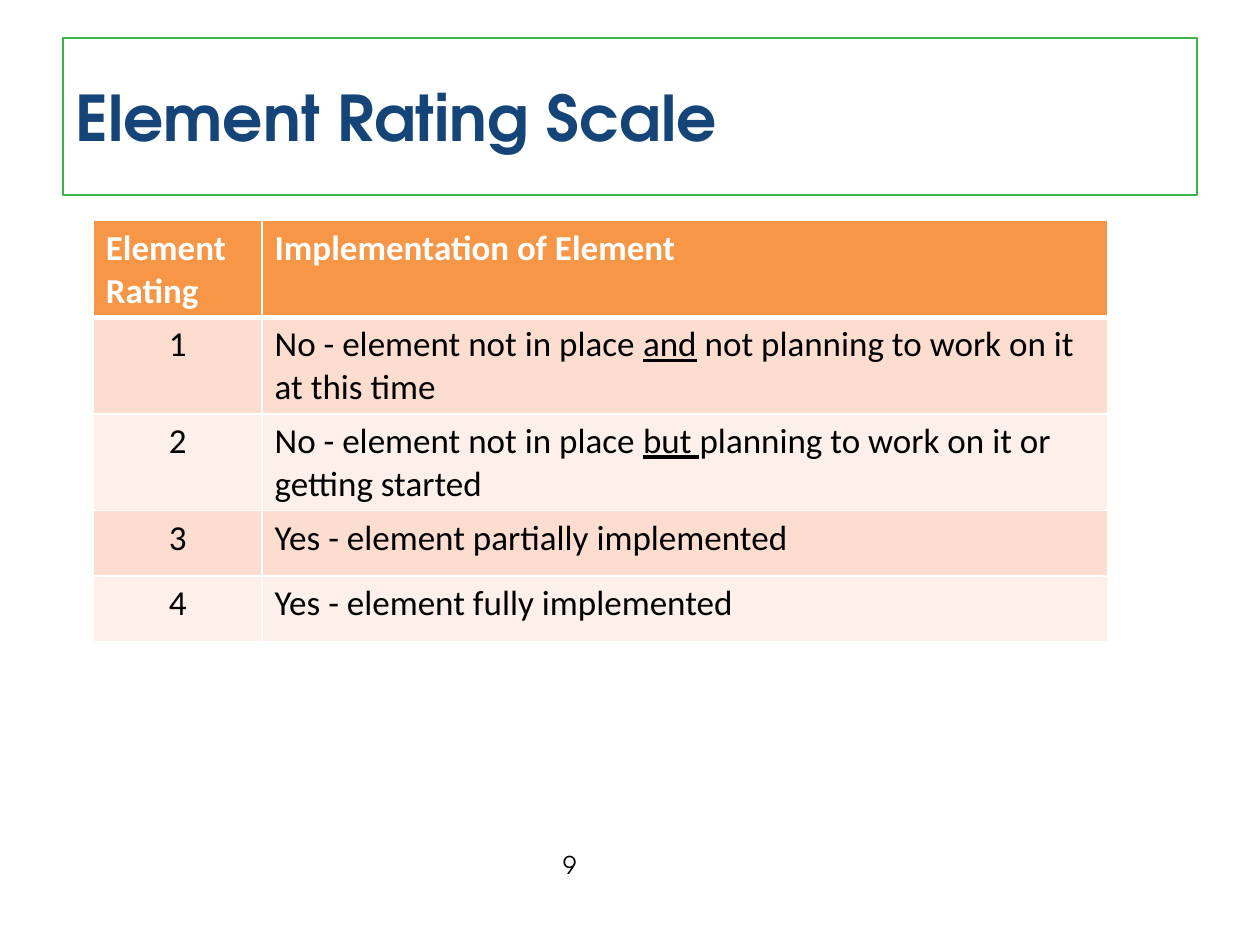
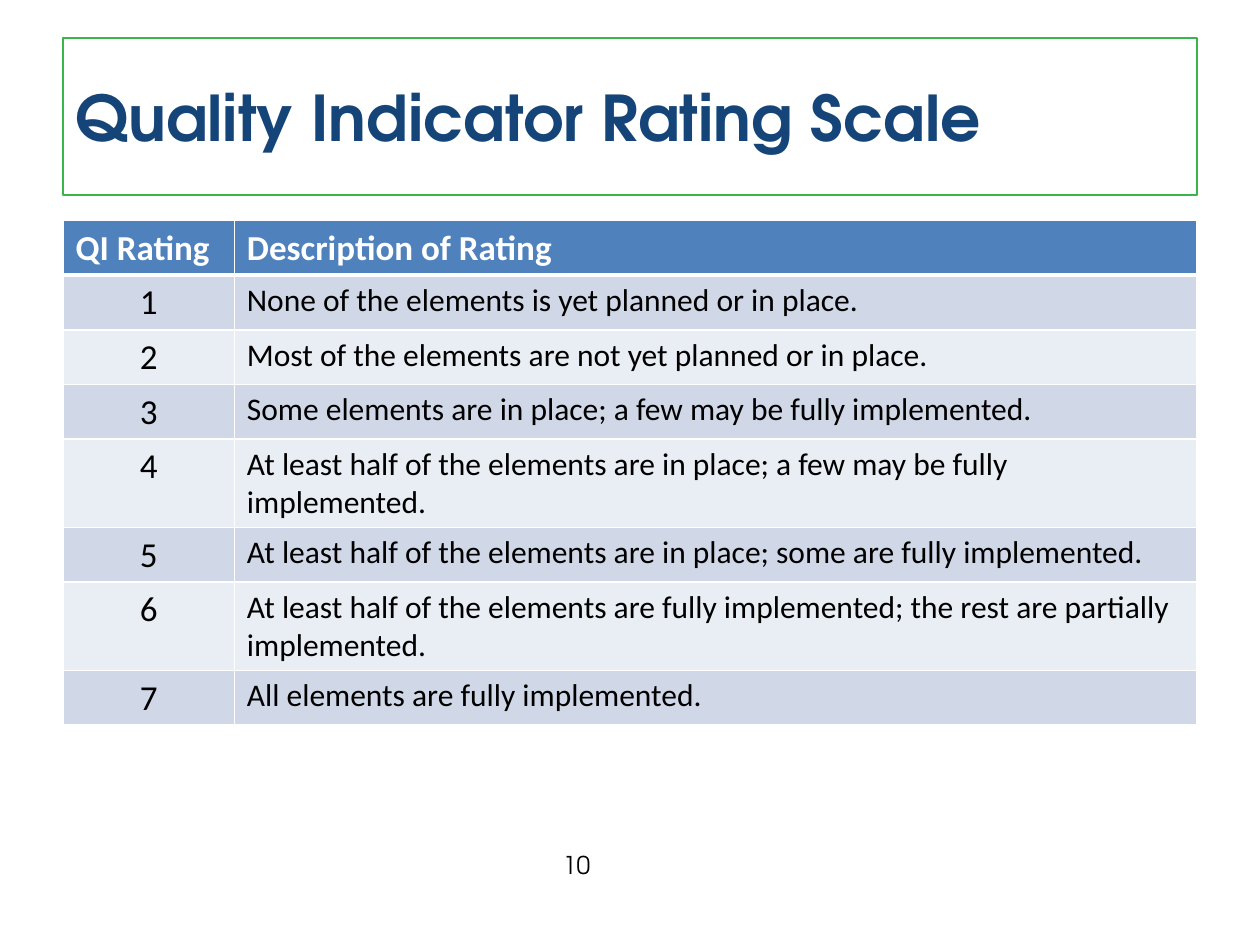
from lxml import etree
from pptx import Presentation
from pptx.dml.color import RGBColor
from pptx.enum import text as t
from pptx.oxml.ns import qn
from pptx.util import Inches, Pt

TITLE_FONT = "TeX Gyre Adventor"
TABLE_FONT = "Calibri"
NAVY, GREEN, WHITE, BLACK = "154578", "39B54A", "FFFFFF", "000000"
# Header, odd row and even row fills
ORANGE_BANDS = ("F79646", "FCDDCF", "FDEFE9")
BLUE_BANDS = ("4F81BD", "D0D8E8", "E9EDF4")

ELEMENT_RATINGS = [
    ["No - element not in place ", ("and",), " not planning to work on it at this time"],
    ["No - element not in place ", ("but ",), "planning to work on it or getting started"],
    ["Yes - element partially implemented"],
    ["Yes - element fully implemented"],
]
QUALITY_RATINGS = [
    ["None of the elements is yet planned or in place."],
    ["Most of the elements are not yet planned or in place."],
    ["Some elements are in place; a few may be fully implemented."],
    ["At least half of the elements are in place; a few may be fully implemented."],
    ["At least half of the elements are in place; some are fully implemented."],
    ["At least half of the elements are fully implemented; the rest are partially implemented."],
    ["All elements are fully implemented."],
]


def color(hex_string):
    return RGBColor.from_string(hex_string)


def place(shape, left, top, width, height):
    shape.left, shape.top = Inches(left), Inches(top)
    shape.width, shape.height = Inches(width), Inches(height)


def add_run(paragraph, words, font_name, size, hex_color, bold=False, underline=False):
    run = paragraph.add_run()
    run.text = words
    font = run.font
    font.name, font.size, font.bold = font_name, Pt(size), bold
    font.underline = underline
    font.color.rgb = color(hex_color)


def add_rating_slide(prs, title_words, page_number):
    """Add a slide with the framed title and its page number."""
    slide = prs.slides.add_slide(prs.slide_layouts[5])
    title = slide.shapes.title
    place(title, 0.5, 0.3, 9, 1.25)
    title.line.color.rgb = color(GREEN)
    title.line.width = Pt(1)
    title.text_frame.vertical_anchor = t.MSO_ANCHOR.MIDDLE
    heading = title.text_frame.paragraphs[0]
    heading.alignment = t.PP_ALIGN.LEFT
    add_run(heading, title_words, TITLE_FONT, 36, NAVY, bold=True)

    footer = slide.shapes.add_textbox(Inches(4.37), Inches(6.7), Inches(1.5), Inches(0.34))
    footer.text_frame.word_wrap = True
    add_run(footer.text_frame.paragraphs[0], str(page_number), TITLE_FONT, 14, BLACK)
    return slide


def set_borders(cell, top, bottom):
    """Draw white cell borders; top and bottom are widths in points."""
    properties = cell._tc.get_or_add_tcPr()
    for side, width in (("L", 1), ("R", 1), ("T", top), ("B", bottom)):
        line = etree.SubElement(properties, qn(f"a:ln{side}"), w=str(Pt(width)))
        fill = etree.SubElement(line, qn("a:solidFill"))
        etree.SubElement(fill, qn("a:srgbClr"), val=WHITE)


def fill_cell(cell, pieces, row, size, bands, centered=False):
    """Write the pieces, underlining those given as tuples."""
    is_header = row == 0
    set_borders(cell, top=3 if row == 1 else 1, bottom=3 if is_header else 1)
    cell.fill.solid()
    cell.fill.fore_color.rgb = color(bands[0] if is_header else bands[2 - row % 2])
    paragraph = cell.text_frame.paragraphs[0]
    if centered:
        paragraph.alignment = t.PP_ALIGN.CENTER
    for piece in pieces:
        underlined = isinstance(piece, tuple)
        add_run(paragraph, piece[0] if underlined else piece, TABLE_FONT, size,
                WHITE if is_header else BLACK, bold=is_header, underline=underlined)


def add_rating_table(slide, left, widths, row_height, headers, ratings, bands, text_size):
    row_count = len(ratings) + 1
    table = slide.shapes.add_table(
        row_count, 2, Inches(left), Inches(1.75),
        Inches(sum(widths)), Inches(row_height * row_count)).table
    for column, width in zip(table.columns, widths):
        column.width = Inches(width)
    for row in table.rows:
        row.height = Inches(row_height)
    for column, header in enumerate(headers):
        fill_cell(table.cell(0, column), [header], 0, 20, bands)
    for rating, description in enumerate(ratings, start=1):
        fill_cell(table.cell(rating, 0), [str(rating)], rating, 20, bands, centered=True)
        fill_cell(table.cell(rating, 1), description, rating, text_size, bands)


def main():
    prs = Presentation()
    prs.slide_width, prs.slide_height = Inches(10), Inches(7.5)

    element_slide = add_rating_slide(prs, "Element Rating Scale", 9)
    add_rating_table(element_slide, 0.74, (1.34, 6.71), 0.52,
                     ("Element Rating", "Implementation of Element"),
                     ELEMENT_RATINGS, ORANGE_BANDS, 20)

    quality_slide = add_rating_slide(prs, "Quality Indicator Rating Scale", 10)
    add_rating_table(quality_slide, 0.5, (1.36, 7.64), 0.41,
                     ("QI Rating", "Description of Rating"),
                     QUALITY_RATINGS, BLUE_BANDS, 18)

    prs.save("out.pptx")


if __name__ == "__main__":
    main()
